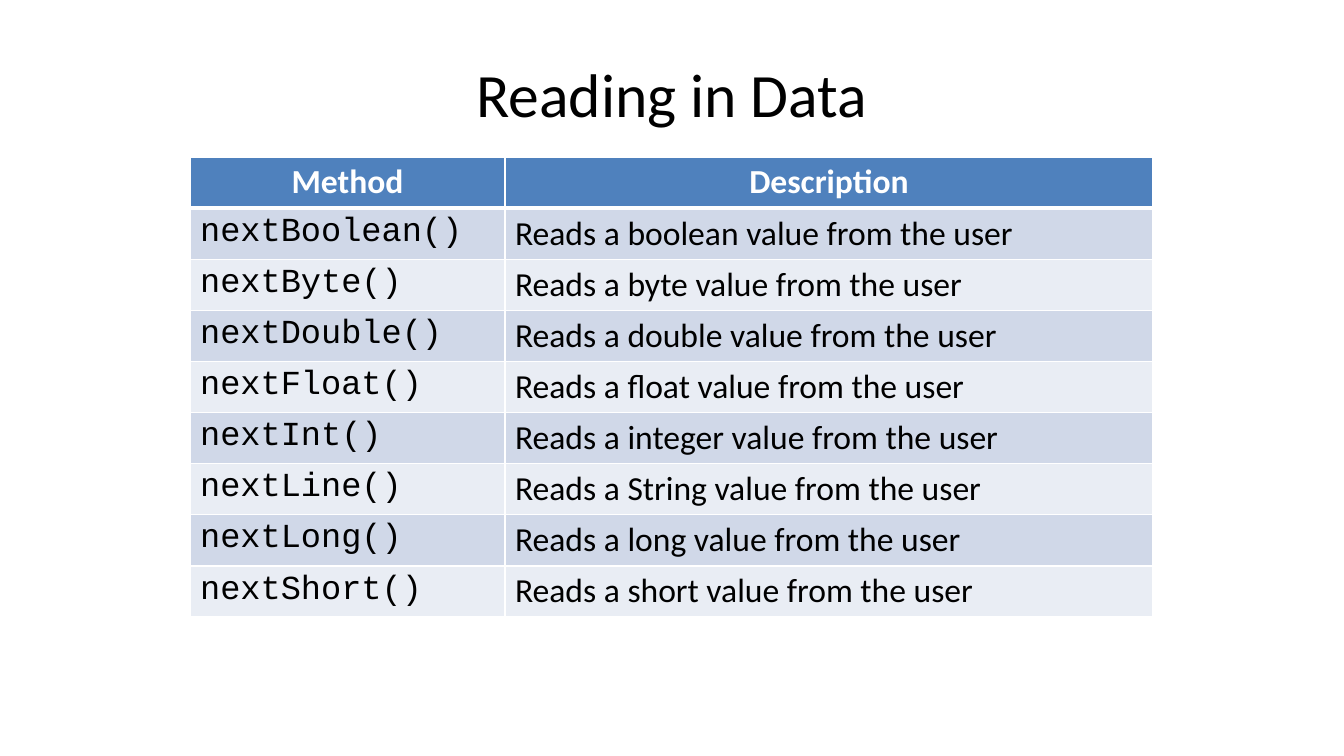
from lxml.etree import SubElement
from pptx import Presentation
from pptx.dml.color import RGBColor
from pptx.enum.text import MSO_ANCHOR, PP_ALIGN
from pptx.oxml.ns import qn
from pptx.util import Pt

EMU_PER_PX = 914400 / 100.8
WHITE, BLACK, BLUE = "FFFFFF", "000000", "4F81BD"
BANDS = ("D0D8E8", "E9EDF4")
COLUMN_WIDTHS = (315, 648)
ROW_HEIGHT = 51
METHODS = (
    ("nextBoolean()", "boolean"),
    ("nextByte()", "byte"),
    ("nextDouble()", "double"),
    ("nextFloat()", "float"),
    ("nextInt()", "integer"),
    ("nextLine()", "String"),
    ("nextLong()", "long"),
    ("nextShort()", "short"),
)


def px(length):
    """Turn pixels into EMU."""
    return round(length * EMU_PER_PX)


def color(value):
    """Turn a hex string into a colour."""
    return RGBColor.from_string(value)


def style_paragraph(para, size, font, ink, align=PP_ALIGN.LEFT, bold=False):
    """Set the alignment and font of a paragraph."""
    para.alignment = align
    para.font.size = Pt(size)
    para.font.name = font
    para.font.bold = bold
    para.font.color.rgb = color(ink)


def set_borders(cell, bottom_width):
    """Give a cell thin white borders and a chosen bottom width."""
    properties = cell._tc.get_or_add_tcPr()
    widths = {"a:lnL": 1, "a:lnR": 1, "a:lnT": 1, "a:lnB": bottom_width}
    for tag, width in widths.items():
        line = SubElement(properties, qn(tag), w=str(Pt(width)))
        fill = SubElement(line, qn("a:solidFill"))
        SubElement(fill, qn("a:srgbClr"), val=WHITE)


def fill_cell(cell, text, fill, bottom_width=1, **style):
    """Write and format one table cell."""
    set_borders(cell, bottom_width)
    cell.fill.solid()
    cell.fill.fore_color.rgb = color(fill)
    cell.text = text
    style_paragraph(cell.text_frame.paragraphs[0], 24, **style)


def add_title(page, text):
    """Place and format the slide title."""
    title = page.shapes.title
    title.left, title.top, title.width, title.height = map(px, (67, 30, 1210, 126))
    title.text_frame.text = text
    title.text_frame.vertical_anchor = MSO_ANCHOR.MIDDLE
    style_paragraph(title.text_frame.paragraphs[0], 44, "Calibri", BLACK, PP_ALIGN.CENTER)


def add_method_table(page, left, top):
    """Add the table of reading methods."""
    row_count = len(METHODS) + 1
    table = page.shapes.add_table(
        row_count, len(COLUMN_WIDTHS), px(left), px(top),
        px(sum(COLUMN_WIDTHS)), px(ROW_HEIGHT * row_count),
    ).table
    for column, width in zip(table.columns, COLUMN_WIDTHS):
        column.width = px(width)
    for row in table.rows:
        row.height = px(ROW_HEIGHT)
    for index, heading in enumerate(("Method", "Description")):
        fill_cell(table.cell(0, index), heading, BLUE, bottom_width=3,
                  font="Calibri", ink=WHITE, align=PP_ALIGN.CENTER, bold=True)
    for index, (method, kind) in enumerate(METHODS):
        band = BANDS[index % 2]
        fill_cell(table.cell(index + 1, 0), method, band, font="Courier New", ink=BLACK)
        fill_cell(table.cell(index + 1, 1), f"Reads a {kind} value from the user", band,
                  font="Calibri", ink=BLACK)


def main():
    """Build and save the slide."""
    deck = Presentation()
    deck.slide_width, deck.slide_height = px(1344), px(756)
    page = deck.slides.add_slide(deck.slide_layouts[5])
    add_title(page, "Reading in Data")
    add_method_table(page, 190, 157)
    deck.save("out.pptx")


if __name__ == "__main__":
    main()
